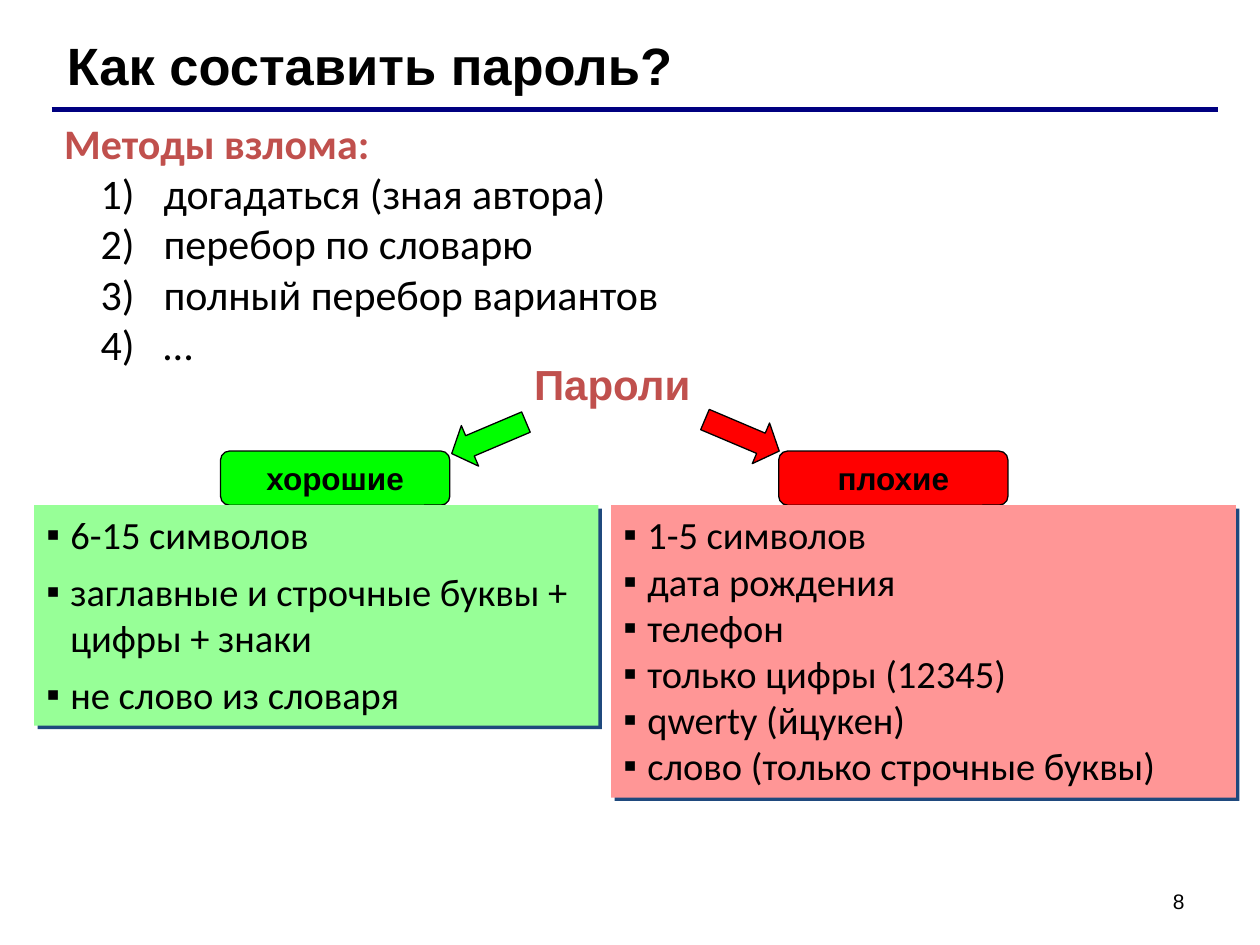
from lxml import etree
from pptx import Presentation
from pptx.dml.color import RGBColor
from pptx.enum.shapes import MSO_CONNECTOR, MSO_SHAPE
from pptx.enum.text import MSO_ANCHOR, MSO_AUTO_SIZE, PP_ALIGN
from pptx.oxml.ns import qn
from pptx.util import Inches, Pt

WIDTH, HEIGHT = 10, 7.5
TITLE_ONLY = 5
LEFT, CENTER, RIGHT = PP_ALIGN.LEFT, PP_ALIGN.CENTER, PP_ALIGN.RIGHT
TOP, MIDDLE = MSO_ANCHOR.TOP, MSO_ANCHOR.MIDDLE
ROUNDED, RECTANGLE = MSO_SHAPE.ROUNDED_RECTANGLE, MSO_SHAPE.RECTANGLE
LEFT_ARROW, RIGHT_ARROW = MSO_SHAPE.LEFT_ARROW, MSO_SHAPE.RIGHT_ARROW

BLACK = RGBColor(0x00, 0x00, 0x00)
NAVY = RGBColor(0x00, 0x00, 0x80)
BRICK = RGBColor(0xC0, 0x50, 0x4D)
GREEN = RGBColor(0x00, 0xFF, 0x00)
RED = RGBColor(0xFF, 0x00, 0x00)
PALE_GREEN = RGBColor(0x97, 0xFF, 0x97)
PALE_RED = RGBColor(0xFF, 0x96, 0x96)
SHADOW_BLUE = "1F497D"

TITLE = {"name": "Arial", "size": Pt(30), "bold": True}
HEADING = {"name": "Calibri", "size": Pt(24), "bold": True}
METHOD = {"name": "Calibri", "size": Pt(24), "bold": False}
SUBTITLE = {"name": "Arial", "size": Pt(24), "bold": True}
LABEL = {"name": "Arial", "size": Pt(18), "bold": True}
ITEM = {"name": "Calibri", "size": Pt(22), "bold": False}
PAGE_NUMBER = {"name": "Arial", "size": Pt(12), "bold": False}

LABEL_TOP, LABEL_WIDTH, LABEL_HEIGHT = 3.58, 1.82, 0.43
CARD_TOP = LABEL_TOP + LABEL_HEIGHT

METHODS = ["догадаться (зная автора)", "перебор по словарю",
           "полный перебор вариантов", "…"]
GOOD = ["6-15 символов", "заглавные и строчные буквы + цифры + знаки",
        "не слово из словаря"]
BAD = ["1-5 символов", "дата рождения", "телефон", "только цифры (12345)",
       "qwerty (йцукен)", "слово (только строчные буквы)"]


def inches(*lengths):
    return [Inches(length) for length in lengths]


def prepare_frame(shape, anchor=TOP, wrap=True):
    frame = shape.text_frame
    settings = {"auto_size": MSO_AUTO_SIZE.NONE, "word_wrap": wrap,
                "vertical_anchor": anchor}
    for name, value in settings.items():
        setattr(frame, name, value)
    return frame


def write(para, text, style, color=BLACK, align=LEFT):
    para.alignment = align
    span = para.add_run()
    span.text = text
    for name, value in style.items():
        setattr(span.font, name, value)
    span.font.color.rgb = color


def set_bullet(para, margin, hanging, tag, **values):
    """Give the paragraph a hanging indent and a bullet or number."""
    properties = para._p.get_or_add_pPr()
    properties.set("marL", str(Inches(margin)))
    properties.set("indent", str(-Inches(hanging)))
    etree.SubElement(properties, qn("a:buFont"), typeface="+mj-lt" if
                     tag == "a:buAutoNum" else "Arial")
    etree.SubElement(properties, qn(tag), **values)


def add_text(page, place, text, style, color=BLACK, align=LEFT,
             anchor=TOP, wrap=True):
    box = page.shapes.add_textbox(*inches(*place))
    frame = prepare_frame(box, anchor, wrap)
    write(frame.paragraphs[0], text, style, color, align)
    return frame


def add_block(page, kind, place, fill, outlined=True):
    block = page.shapes.add_shape(kind, *inches(*place))
    block.shadow.inherit = False
    block.fill.solid()
    block.fill.fore_color.rgb = fill
    if outlined:
        block.line.color.rgb = BLACK
        block.line.width = Pt(0.75)
    else:
        block.line.fill.background()
    return block


def add_label(page, left, text, fill):
    place = (left, LABEL_TOP, LABEL_WIDTH, LABEL_HEIGHT)
    label = add_block(page, ROUNDED, place, fill)
    frame = prepare_frame(label, MIDDLE, wrap=False)
    write(frame.paragraphs[0], text, LABEL, align=CENTER)


def add_arrow(page, kind, left, top, angle, fill):
    arrow = add_block(page, kind, (left, top, 0.64, 0.35), fill)
    arrow.rotation = angle
    arrow.adjustments[1] = 0.45


def add_card(page, left, width, height, items, fill, gap):
    card = add_block(page, RECTANGLE, (left, CARD_TOP, width, height), fill,
                     outlined=False)
    # Hard offset shadow to the lower right
    effects = card._element.spPr.find(qn("a:effectLst"))
    shadow = etree.SubElement(effects, qn("a:outerShdw"), dist=str(Pt(2.8)),
                              dir="2700000", algn="ctr", rotWithShape="0")
    etree.SubElement(shadow, qn("a:srgbClr"), val=SHADOW_BLUE)
    frame = prepare_frame(card)
    for index, item in enumerate(items):
        para = frame.add_paragraph() if index else frame.paragraphs[0]
        para.space_before = Pt(gap)
        set_bullet(para, 0.19, 0.19, "a:buChar", char="▪")
        write(para, item, ITEM)


def add_title(page, text):
    title = page.shapes.title
    title.left, title.top, title.width, title.height = inches(
        0.43, 0.21, 0.89 * WIDTH, 0.08 * HEIGHT)
    write(prepare_frame(title).paragraphs[0], text, TITLE)
    # Rule under the title
    rule = page.shapes.add_connector(MSO_CONNECTOR.STRAIGHT,
                                     *inches(0.41, 0.87, 9.67, 0.87))
    rule.line.color.rgb = NAVY
    rule.line.width = Pt(3)
    etree.SubElement(rule._element.spPr, qn("a:effectLst"))


def add_methods(page):
    frame = add_text(page, (0.41, 0.88, 9.21, 2.12), "Методы взлома:",
                     HEADING, BRICK)
    for method in METHODS:
        para = frame.add_paragraph()
        set_bullet(para, 0.79, 0.5, "a:buAutoNum", type="arabicParenR")
        write(para, method, METHOD)


def main():
    deck = Presentation()
    deck.slide_width, deck.slide_height = inches(WIDTH, HEIGHT)
    page = deck.slides.add_slide(deck.slide_layouts[TITLE_ONLY])

    add_title(page, "Как составить пароль?")
    add_methods(page)

    # Two branches: good and bad passwords
    add_text(page, (4.14, 2.8, 1.45, 0.5), "Пароли", SUBTITLE, BRICK,
             wrap=False)
    add_label(page, 1.75, "хорошие", GREEN)
    add_label(page, 6.18, "плохие", RED)
    add_card(page, 4.85, 4.96, 2.32, BAD, PALE_RED, gap=0)
    add_arrow(page, LEFT_ARROW, 3.56, 3.3, 337, GREEN)
    add_arrow(page, RIGHT_ARROW, 5.57, 3.28, 23, RED)
    add_card(page, 0.27, 4.48, 1.75, GOOD, PALE_GREEN, gap=6)

    # Page number
    add_text(page, (7.17, 6.95, 2.33, 0.4), "8", PAGE_NUMBER, align=RIGHT,
             anchor=MIDDLE)
    deck.save("out.pptx")


if __name__ == "__main__":
    main()
